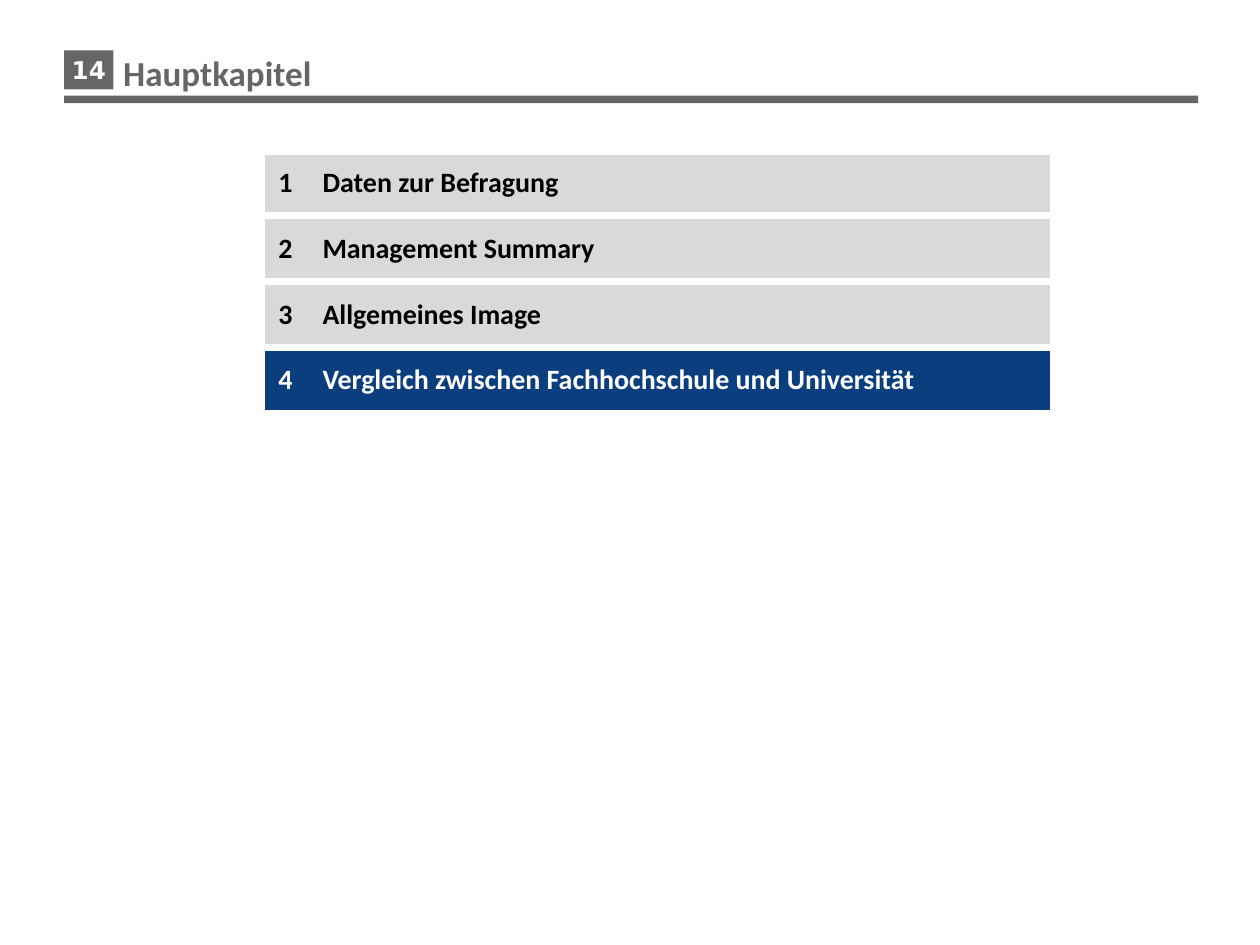
from dataclasses import dataclass

from lxml.etree import SubElement
from pptx import Presentation
from pptx.dml.color import RGBColor
from pptx.enum.shapes import MSO_SHAPE
from pptx.enum.text import MSO_ANCHOR, PP_ALIGN
from pptx.oxml.ns import qn
from pptx.util import Inches, Pt

GREY = RGBColor(0x66, 0x66, 0x66)
LIGHT = RGBColor(0xD9, 0xD9, 0xD9)
BLUE = RGBColor(0x0B, 0x3E, 0x7F)
BLACK = RGBColor(0, 0, 0)
WHITE = RGBColor(0xFF, 0xFF, 0xFF)


@dataclass
class Chapter:
    title: str
    active: bool = False


CHAPTERS = [
    Chapter("Daten zur Befragung"),
    Chapter("Management Summary"),
    Chapter("Allgemeines Image"),
    Chapter("Vergleich zwischen Fachhochschule und Universität", active=True),
]


def set_text(tf, text: str, size: float, color: RGBColor,
             font: str = "Calibri", align=PP_ALIGN.LEFT) -> None:
    p = tf.paragraphs[0]
    p.text = text
    p.alignment = align
    p.font.name = font
    p.font.size = Pt(size)
    p.font.bold = True
    p.font.color.rgb = color


def add_bar(s, left: float, top: float, width: float, height: float):
    sp = s.shapes.add_shape(MSO_SHAPE.RECTANGLE, Inches(left), Inches(top),
                            Inches(width), Inches(height))
    sp.shadow.inherit = False
    sp.fill.solid()
    sp.fill.fore_color.rgb = GREY
    sp.line.fill.background()
    return sp


def set_borders(cell, widths: dict[str, float]) -> None:
    """Give white borders in points by side (L, R, T, B); 0 means none."""
    tc_pr = cell._tc.get_or_add_tcPr()
    for i, (side, width) in enumerate(widths.items()):
        ln = SubElement(tc_pr, qn(f"a:ln{side}"), w=str(Pt(width)))
        if width:
            fill = SubElement(ln, qn("a:solidFill"))
            SubElement(fill, qn("a:srgbClr"), val=str(WHITE))
        else:
            SubElement(ln, qn("a:noFill"))
        tc_pr.insert(i, ln)  # borders precede the cell fill


def add_agenda(s, chapters: list[Chapter]) -> None:
    table = s.shapes.add_table(len(chapters), 2, Inches(2.07), Inches(1.19),
                               Inches(6.3), Inches(2.09)).table
    table.first_row = table.horz_banding = False
    table.columns[0].width = Inches(0.39)
    table.columns[1].width = Inches(5.91)
    for row, chapter in enumerate(chapters):
        texts = [(str(row + 1), PP_ALIGN.CENTER), (chapter.title, PP_ALIGN.LEFT)]
        for col, (text, align) in enumerate(texts):
            cell = table.cell(row, col)
            cell.vertical_anchor = MSO_ANCHOR.MIDDLE
            cell.margin_left = cell.margin_right = Inches(0.1)
            cell.margin_top = cell.margin_bottom = Inches(0.08)
            cell.fill.solid()
            cell.fill.fore_color.rgb = BLUE if chapter.active else LIGHT
            set_text(cell.text_frame, text, 16,
                     WHITE if chapter.active else BLACK, align=align)
            set_borders(cell, {"L": 0 if col else 6, "R": 6 if col else 0,
                               "T": 4.5 if row else 6, "B": 4.5})


def main() -> None:
    prs = Presentation()
    prs.slide_width, prs.slide_height = Inches(10), Inches(7.5)
    s = prs.slides.add_slide(prs.slide_layouts[6])

    number = add_bar(s, 0.51, 0.4, 0.39, 0.31)
    number.text_frame.word_wrap = False
    number.text_frame.vertical_anchor = MSO_ANCHOR.MIDDLE
    set_text(number.text_frame, "14", 14, WHITE, "DejaVu Sans", PP_ALIGN.CENTER)
    add_bar(s, 0.51, 0.76, 9, 0.06)

    add_agenda(s, CHAPTERS)

    title = s.shapes.add_textbox(Inches(0.88), Inches(0.36),
                                 Inches(8.67), Inches(0.47))
    title.text_frame.word_wrap = True
    set_text(title.text_frame, "Hauptkapitel", 20, GREY)

    prs.save("out.pptx")


if __name__ == "__main__":
    main()
